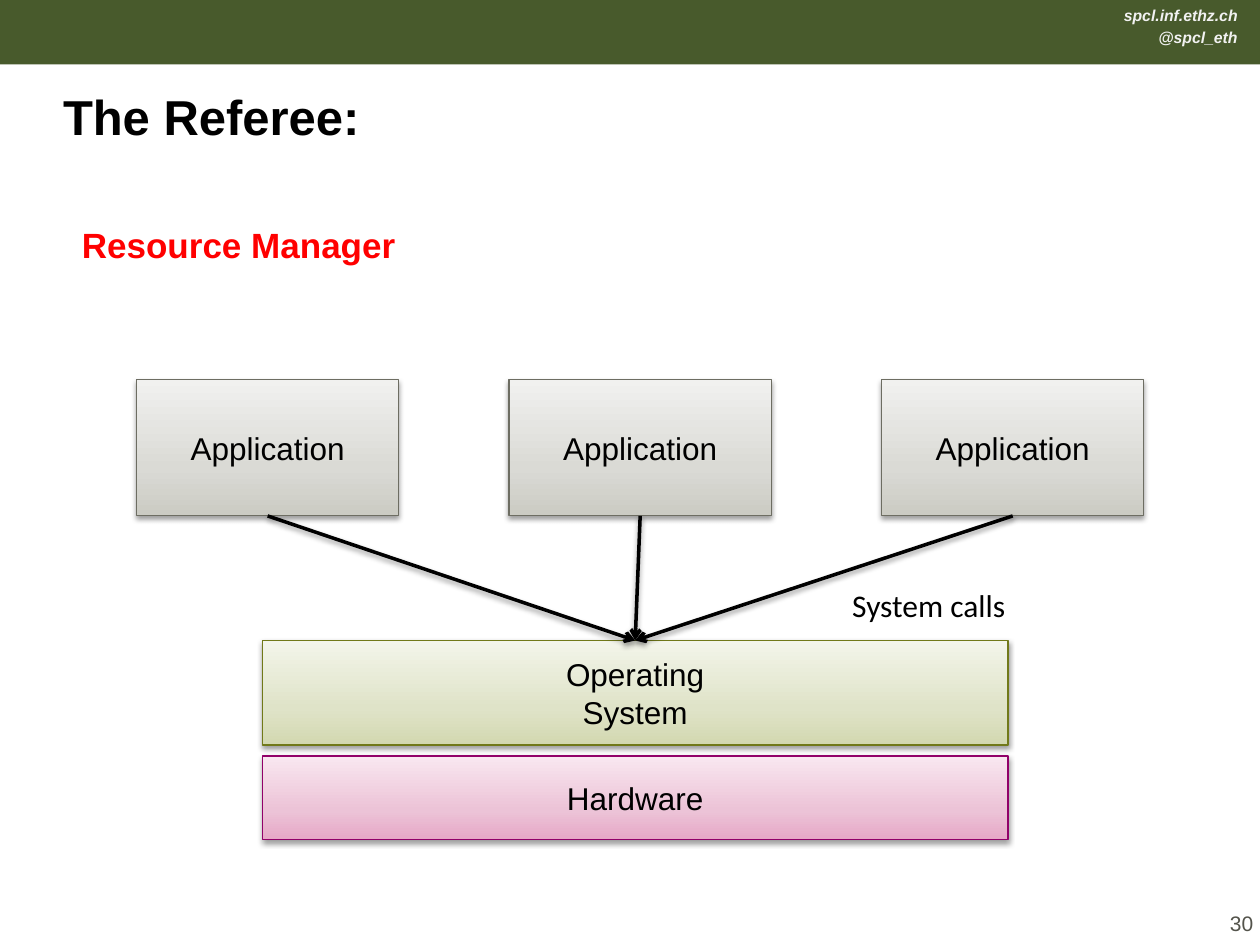
from copy import deepcopy

from lxml.etree import SubElement
from pptx import Presentation
from pptx.dml.color import RGBColor
from pptx.enum.shapes import MSO_CONNECTOR as Connector, MSO_SHAPE as Shape
from pptx.enum.text import MSO_ANCHOR as Anchor, MSO_AUTO_SIZE as AutoSize, PP_ALIGN as Align
from pptx.oxml.ns import qn
from pptx.util import Cm, Pt

BLACK = RGBColor(0x00, 0x00, 0x00)
WHITE = RGBColor(0xFF, 0xFF, 0xFF)
RED = RGBColor(0xFF, 0x00, 0x00)
BANNER_GREEN = RGBColor(0x48, 0x5A, 0x2C)
BANNER_TEXT = RGBColor(0xF2, 0xF2, 0xF2)
NUMBER_GREY = RGBColor(0x53, 0x53, 0x4B)
APP_LINE = RGBColor(0x6D, 0x6D, 0x62)
APP_SHADES = (RGBColor(0xCB, 0xCB, 0xC3), RGBColor(0xDA, 0xDA, 0xD5), RGBColor(0xF1, 0xF1, 0xEF))
OS_LINE = RGBColor(0x71, 0x79, 0x19)
OS_SHADES = (RGBColor(0xD3, 0xD8, 0xB0), RGBColor(0xDF, 0xE3, 0xC8), RGBColor(0xF3, 0xF5, 0xEA))
HARDWARE_LINE = RGBColor(0x91, 0x01, 0x69)
HARDWARE_SHADES = (RGBColor(0xE6, 0xA8, 0xC7), RGBColor(0xEC, 0xC3, 0xD7), RGBColor(0xF9, 0xE7, 0xF0))
SHADE_STOPS = (0, 0.35, 1)

# Connection sites of a rectangle
TOP_SITE, BOTTOM_SITE = 0, 2


def write(holder, text, size=18, font="Arial", color=BLACK, bold=False, italic=False,
          align=Align.LEFT, anchor=Anchor.TOP, wrap=False, insets=None):
    """Put one formatted paragraph in a shape, placeholder or text box."""
    frame = holder.text_frame
    frame.auto_size = AutoSize.NONE
    frame.word_wrap = wrap
    frame.vertical_anchor = anchor
    if insets:
        frame.margin_left, frame.margin_top, frame.margin_right, frame.margin_bottom = map(Cm, insets)
    paragraph = frame.paragraphs[0]
    paragraph.text = text
    paragraph.alignment = align
    paragraph.space_before = Pt(0)
    for run in paragraph.runs:
        run.font.name = font
        run.font.size = Pt(size)
        run.font.bold = bold
        run.font.italic = italic
        run.font.color.rgb = color


def place(holder, left, top, width, height):
    holder.left, holder.top, holder.width, holder.height = map(Cm, (left, top, width, height))


def add_label(slide, text, left, top, width, height, **style):
    label = slide.shapes.add_textbox(Cm(left), Cm(top), Cm(width), Cm(height))
    write(label, text, **style)


def add_soft_shadow(properties):
    effects = SubElement(properties, qn("a:effectLst"))
    shadow = SubElement(effects, qn("a:outerShdw"), blurRad="40000", dist="20000",
                        dir="5400000", rotWithShape="0")
    black = SubElement(shadow, qn("a:srgbClr"), val="000000")
    SubElement(black, qn("a:alpha"), val="38000")


def add_layer(slide, text, left, top, width, height, shades, outline):
    """Add a shaded box, dark at the bottom, that stands for one system layer."""
    layer = slide.shapes.add_shape(Shape.RECTANGLE, Cm(left), Cm(top), Cm(width), Cm(height))
    layer.fill.gradient()
    layer.fill.gradient_angle = 90
    stop_list = layer.fill.gradient_stops[0]._gs.getparent()
    stop_list.insert(1, deepcopy(stop_list[0]))
    for stop, position, shade in zip(layer.fill.gradient_stops, SHADE_STOPS, shades):
        stop.position = position
        stop.color.rgb = shade
    layer.line.color.rgb = outline
    layer.line.width = Pt(0.75)
    add_soft_shadow(layer._element.spPr)
    write(layer, text, align=Align.CENTER, anchor=Anchor.MIDDLE, wrap=True)
    return layer


def add_call_arrow(slide, caller, callee):
    arrow = slide.shapes.add_connector(Connector.STRAIGHT, 0, 0, 0, 0)
    arrow.begin_connect(caller, BOTTOM_SITE)
    arrow.end_connect(callee, TOP_SITE)
    arrow.line.color.rgb = BLACK
    arrow.line.width = Pt(2)
    SubElement(arrow.line._get_or_add_ln(), qn("a:tailEnd"), type="arrow")
    add_soft_shadow(arrow._element.spPr)


def add_banner(slide):
    banner = slide.shapes.add_shape(Shape.RECTANGLE, 0, 0, Cm(25.4), Cm(1.3))
    banner.shadow.inherit = False
    banner.fill.solid()
    banner.fill.fore_color.rgb = BANNER_GREEN
    banner.line.fill.background()
    contact_style = dict(size=9, color=BANNER_TEXT, bold=True, italic=True, align=Align.RIGHT)
    add_label(slide, "spcl.inf.ethz.ch", 22.38, 0, 2.82, 0.64, **contact_style)
    add_label(slide, "@spcl_eth", 23.09, 0.43, 2.11, 0.64, **contact_style)


def fill_placeholders(slide):
    title, body = slide.placeholders
    insets = (0.38, 0, 0.4, 0)
    place(title, 0.89, 1.47, 23.6, 1.47)
    title.fill.solid()
    title.fill.fore_color.rgb = WHITE
    write(title, "The Referee:", size=28, bold=True, anchor=Anchor.BOTTOM, wrap=True, insets=insets)

    # The subtitle is a body line without a bullet
    place(body, 1.27, 4.5, 9.32, 1.6)
    bullet_format = body.text_frame.paragraphs[0]._p.get_or_add_pPr()
    bullet_format.set("marL", "0")
    bullet_format.set("indent", "0")
    SubElement(bullet_format, qn("a:buNone"))
    write(body, "Resource Manager", size=20, color=RED, bold=True, insets=insets)


def add_system_diagram(slide):
    # Shared layers
    system = add_layer(slide, "Operating\nSystem", 5.29, 12.91, 15.03, 2.11, OS_SHADES, OS_LINE)
    add_layer(slide, "Hardware", 5.29, 15.24, 15.03, 1.69, HARDWARE_SHADES, HARDWARE_LINE)

    # Applications and their calls into the operating system
    for column in range(3):
        application = add_layer(slide, "Application", 2.75 + 7.51 * column, 7.65, 5.29, 2.75,
                                APP_SHADES, APP_LINE)
        add_call_arrow(slide, application, system)
    add_label(slide, "System calls", 16.93, 11.68, 3.63, 1.02, font="Calibri")


def main():
    deck = Presentation()
    deck.slide_width, deck.slide_height = Cm(25.4), Cm(19.05)
    slide = deck.slides.add_slide(deck.slide_layouts[1])
    add_banner(slide)
    fill_placeholders(slide)
    add_system_diagram(slide)
    # Slide number
    add_label(slide, "30", 24.66, 18.16, 0.74, 0.88, size=12, color=NUMBER_GREY,
              align=Align.CENTER, anchor=Anchor.MIDDLE, insets=(0, 0, 0, 0))
    deck.save("out.pptx")


if __name__ == "__main__":
    main()
